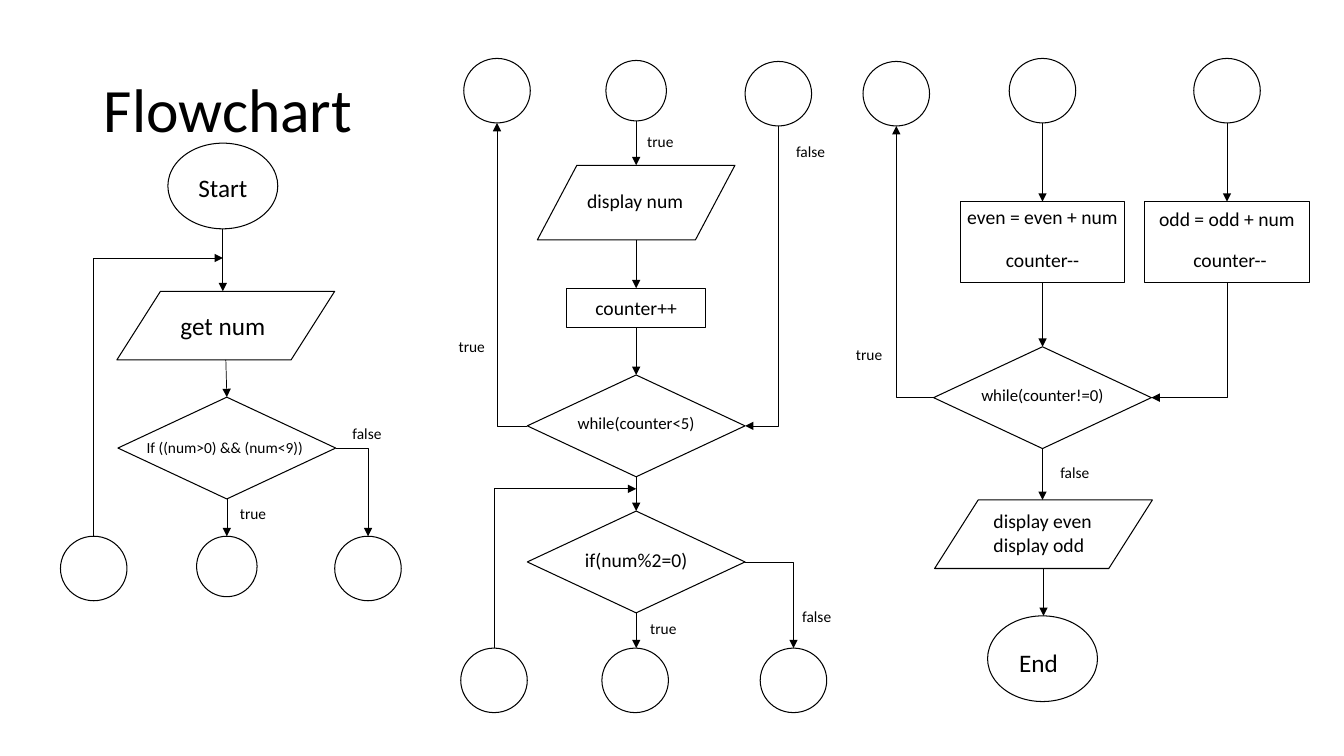
from lxml.etree import SubElement
from pptx import Presentation
from pptx.dml.color import RGBColor
from pptx.enum.shapes import MSO_CONNECTOR as Link, MSO_SHAPE as Preset
from pptx.enum.text import MSO_ANCHOR as Anchor, MSO_AUTO_SIZE as AutoSize, PP_ALIGN as Align
from pptx.oxml.ns import qn
from pptx.util import Inches, Pt

COLUMNS, ROWS = 133.3, 75
CELL = Inches(0.1)
LEFT, MIDDLE, RIGHT, ODD = 22.5, 63.1, 103.4, 121.7
INK = "000000"
JOINABLE = (Preset.FLOWCHART_PROCESS, Preset.FLOWCHART_DECISION)
DECISION = (Preset.FLOWCHART_DECISION, 21.6, 10.1)
DATA = (Preset.FLOWCHART_DATA, 21.6, 6.8)
DISPLAY = (Preset.FLOWCHART_DATA, 19.6, 7.4)
STEP = (Preset.FLOWCHART_PROCESS, 13.8, 3.9)
TALL_STEP = (Preset.FLOWCHART_PROCESS, 16.3, 8)
TERMINAL = (Preset.OVAL, 10.9, 8.5)
JUMP = (Preset.FLOWCHART_CONNECTOR, 6.6, 6.4)
SMALL_JUMP = (Preset.FLOWCHART_CONNECTOR, 6, 6)
LABEL_HEIGHTS = {11: 2.9, 12: 3, 14: 3.4, 18: 4}

LABELS = [
    ("Start", 22.1, 16.6, 8.4, 18),
    ("get num", 22.1, 30.3, 13.7, 18),
    ("false", 36.4, 41.6, 9.2, 11),
    ("true", 25.1, 49.5, 8.7, 11),
    ("true", 65.5, 12.6, 8.7, 11),
    ("false", 80.4, 13.6, 9.2, 11),
    ("display num", 63, 18.3, 13.7, 14),
    ("counter++", MIDDLE, 28.9, 13.8, 14),
    ("true", 46.8, 32.9, 8.7, 11),
    ("while(counter<5)", MIDDLE, 40.5, 17.6, 12),
    ("if(num%2=0)", MIDDLE, 53.9, 17.6, 14),
    ("true", 65.8, 60.9, 8.7, 11),
    ("false", 81, 59.7, 9.2, 11),
    ("even = even + num", RIGHT, 19.8, 20.3, 14),
    ("counter--", RIGHT, 24.1, 20.3, 14),
    ("odd = odd + num", ODD, 20, 20.3, 14),
    ("counter--", 122, 24.1, 20.3, 14),
    ("true", 86.2, 33.7, 8.7, 11),
    ("while(counter!=0)", RIGHT, 37.7, 17.6, 12),
    ("false", 106.6, 45.4, 9.2, 11),
    ("End", 103, 63.7, 8.4, 18),
]


def color(value):
    return RGBColor.from_string(value)


def cells(*values):
    return [int(value * CELL) for value in values]


def apply_format(target, values):
    for name, value in values.items():
        setattr(target, name, value)


def write_text(frame, text, size, align, **frame_format):
    apply_format(frame, {"word_wrap": True, **frame_format})
    paragraph = frame.paragraphs[0]
    apply_format(paragraph, {"text": text, "alignment": align})
    for run in paragraph.runs:
        apply_format(run.font, {"size": Pt(size), "name": "Calibri"})
        run.font.color.rgb = color(INK)
    return paragraph


def add_title(slide, text):
    title = slide.shapes.title
    left, top, width, height = cells(9.3, 3.9, 115, 14.5)
    apply_format(title, {"left": left, "top": top, "width": width, "height": height})
    paragraph = write_text(title.text_frame, text, 44, Align.LEFT,
                           vertical_anchor=Anchor.MIDDLE)
    paragraph.line_spacing = 0.9


def add_label(slide, text, center, top, width, size, align=Align.CENTER, lines=1):
    height = LABEL_HEIGHTS[size] + (lines - 1) * 2.3
    box = slide.shapes.add_textbox(*cells(center - width / 2, top, width, height))
    write_text(box.text_frame, text, size, align, auto_size=AutoSize.SHAPE_TO_FIT_TEXT)


def add_node(slide, kind, center, top):
    preset, width, height = kind
    shape = slide.shapes.add_shape(preset, *cells(center - width / 2, top, width, height))
    shape.shadow.inherit = False
    shape.fill.background()
    shape.line.width = Pt(0.75)
    shape.line.color.rgb = color(INK)
    return shape


def add_arrow(slide, link, start, end):
    points = [int(value) for value in (*start, *end)]
    connector = slide.shapes.add_connector(link, *points)
    connector.line.width = Pt(0.5)
    connector.line.color.rgb = color(INK)
    properties = connector._element.spPr
    SubElement(properties.find(qn("a:ln")), qn("a:tailEnd"), type="triangle")
    SubElement(properties, qn("a:effectLst"))
    return connector


def side(shape, site):
    middle_x, middle_y = shape.left + shape.width / 2, shape.top + shape.height / 2
    return [(middle_x, shape.top), (shape.left, middle_y),
            (middle_x, shape.top + shape.height),
            (shape.left + shape.width, middle_y)][site]


def flow_down(slide, *steps):
    for upper, lower in zip(steps, steps[1:]):
        start, end = side(upper, 2), side(lower, 0)
        if lower.auto_shape_type not in JOINABLE:
            end = (start[0], end[1])
        connector = add_arrow(slide, Link.STRAIGHT, start, end)
        if upper.auto_shape_type in JOINABLE:
            connector.begin_connect(upper, 2)
        if lower.auto_shape_type in JOINABLE:
            connector.end_connect(lower, 0)


def bend(slide, start, end, vertical_first=False):
    if vertical_first:
        center_x, center_y = [(a + b) / 2 for a, b in zip(start, end)]
        half_x, half_y = (end[1] - start[1]) / 2, (start[0] - end[0]) / 2
        start = (center_x - half_x, center_y - half_y)
        end = (center_x + half_x, center_y + half_y)
    properties = add_arrow(slide, Link.ELBOW, start, end)._element.spPr
    properties.find(qn("a:prstGeom")).set("prst", "bentConnector2")
    if vertical_first:
        properties.find(qn("a:xfrm")).set("rot", "5400000")


def draw_input(slide):
    steps = [add_node(slide, *step) for step in (
        (TERMINAL, 22.1, 14.2), (DATA, 22.4, 28.9),
        (DECISION, LEFT, 39.4), (SMALL_JUMP, LEFT, 53.2))]
    flow_down(slide, *steps)
    back, skip = [add_node(slide, JUMP, center, 53.2) for center in (9.3, 36.5)]
    bend(slide, side(back, 0), cells(22.1, 25.6), vertical_first=True)
    bend(slide, side(steps[2], 3), side(skip, 0))


def draw_counting(slide):
    steps = [add_node(slide, *step) for step in (
        (SMALL_JUMP, MIDDLE, 6), (DISPLAY, MIDDLE, 16.4), (STEP, MIDDLE, 28.6),
        (DECISION, MIDDLE, 37.2), (DECISION, MIDDLE, 50.7), (JUMP, 63, 64.3))]
    flow_down(slide, *steps)
    loop, test = steps[3:5]
    repeat, skip, back, other = [add_node(slide, JUMP, *place) for place in (
        (49.3, 5.8), (77.2, 6.1), (49, 64.3), (78.7, 64.3))]
    bend(slide, side(loop, 1), side(repeat, 2))
    bend(slide, side(skip, 2), side(loop, 3), vertical_first=True)
    bend(slide, side(back, 0), cells(MIDDLE, 48.5), vertical_first=True)
    bend(slide, side(test, 3), side(other, 0))


def draw_totals(slide):
    steps = [add_node(slide, *step) for step in (
        (JUMP, RIGHT, 5.8), (TALL_STEP, RIGHT, 20), (DECISION, RIGHT, 34.4),
        (DATA, 103.5, 49.6), (TERMINAL, RIGHT, 61.1))]
    flow_down(slide, *steps)
    odd_steps = [add_node(slide, JUMP, ODD, 5.8), add_node(slide, TALL_STEP, ODD, 20)]
    flow_down(slide, *odd_steps)
    repeat = add_node(slide, JUMP, 88.9, 6.1)
    bend(slide, side(steps[2], 1), side(repeat, 2))
    bend(slide, side(odd_steps[1], 2), side(steps[2], 3), vertical_first=True)


def main():
    presentation = Presentation()
    width, height = cells(COLUMNS, ROWS)
    apply_format(presentation, {"slide_width": width, "slide_height": height})
    slide = presentation.slides.add_slide(presentation.slide_layouts[5])
    add_title(slide, "Flowchart")
    for draw in (draw_input, draw_counting, draw_totals):
        draw(slide)
    for label in LABELS:
        add_label(slide, *label)
    add_label(slide, "If ((num>0) && (num<9))", 23.9, 43, 20.7, 11, Align.LEFT)
    add_label(slide, "display even\ndisplay odd", 104.3, 50, 13.5, 14, Align.LEFT, 2)
    presentation.save("out.pptx")


if __name__ == "__main__":
    main()
